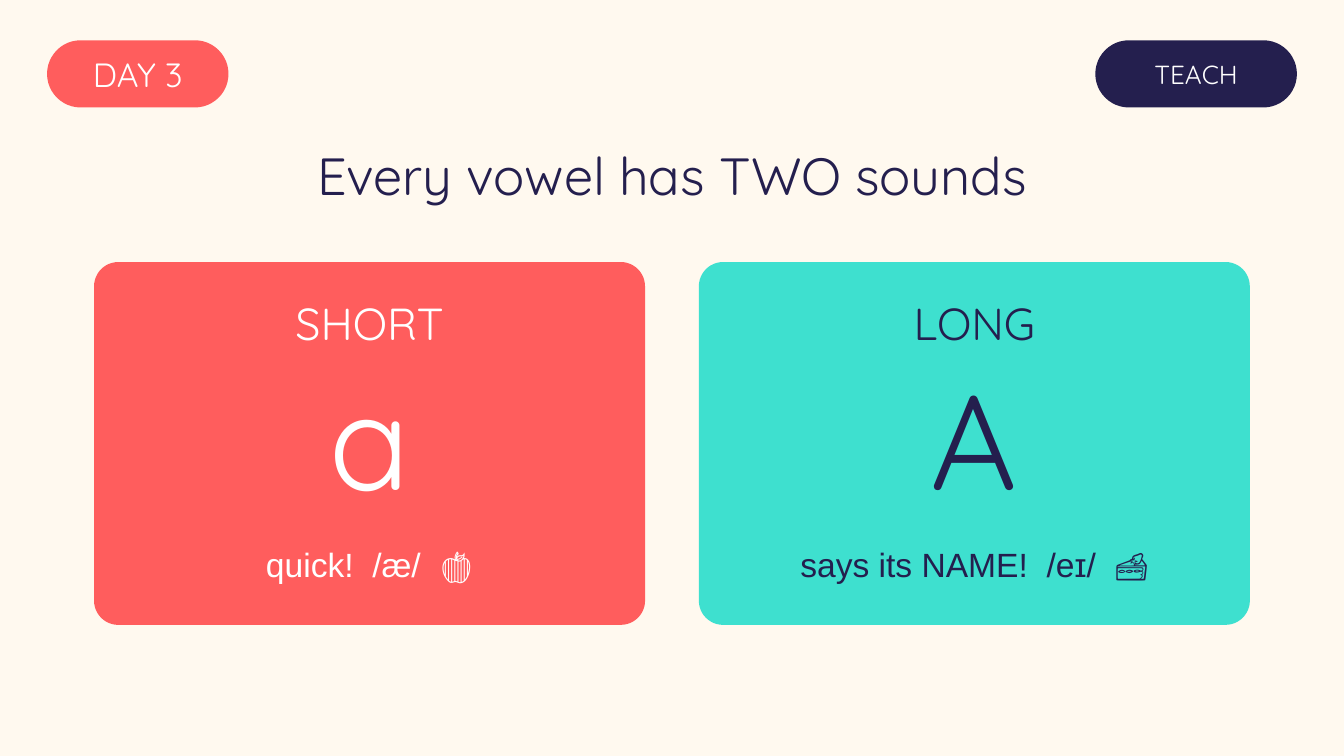
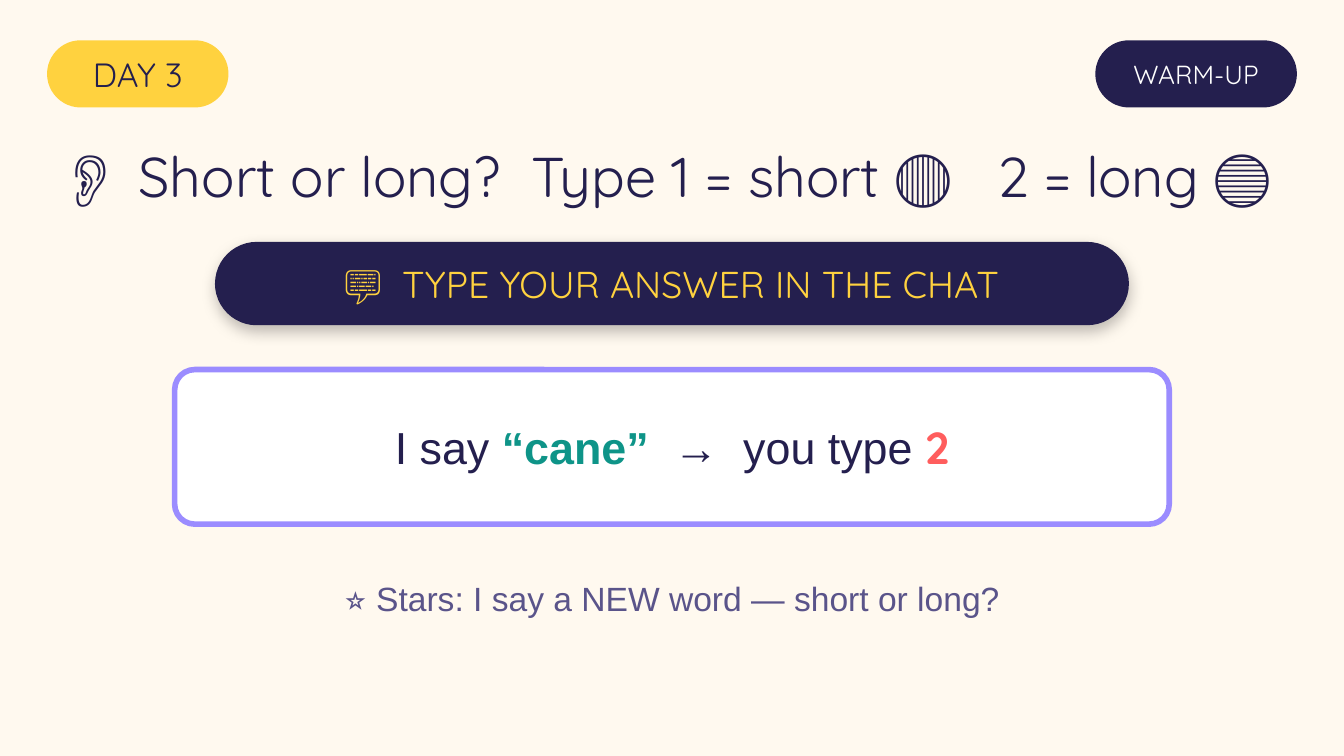
"""Build two phonics lesson slides: a vowel comparison and a chat warm-up."""
from dataclasses import dataclass
from typing import Optional

from lxml.etree import SubElement
from pptx import Presentation
from pptx.dml.color import RGBColor
from pptx.enum.shapes import MSO_SHAPE
from pptx.enum.text import MSO_ANCHOR, MSO_AUTO_SIZE, PP_ALIGN
from pptx.oxml.ns import qn
from pptx.shapes.autoshape import Shape
from pptx.slide import Slide
from pptx.text.text import TextFrame
from pptx.util import Emu, Inches, Pt

CREAM, WHITE, NAVY, MUTED = "FFF9EF", "FFFFFF", "241F4E", "5A548A"
CORAL, AQUA, YELLOW, LILAC, TEAL = "FF5D5D", "3EE0CF", "FFD23F", "9B8CFF", "0E9488"
HEADING, BODY = "Quicksand", "Arial"
COLUMNS = 100
CELL = Inches(10) // COLUMNS
TITLE_ONLY = 5


@dataclass(frozen=True)
class Area:
    """A rectangle in grid columns and rows."""
    column: float
    row: float
    columns: float
    rows: float

    def lengths(self) -> list[Emu]:
        """Return left, top, width and height."""
        return [Emu(round(n * CELL)) for n in (self.column, self.row, self.columns, self.rows)]


@dataclass(frozen=True)
class Style:
    """Size, colour and typeface of a paragraph."""
    size: float
    color: str
    family: str = HEADING


@dataclass(frozen=True)
class Part:
    """A stretch of a sentence, with its emphasis if any."""
    words: str
    color: Optional[str] = None
    family: Optional[str] = None


@dataclass(frozen=True)
class VowelCard:
    """One vowel sound with its colours."""
    kind: str
    letter: str
    hint: str
    fill: str
    ink: str


DAY_AREA = Area(3.5, 3, 13.5, 5)
STAGE_AREA = Area(81.5, 3, 15, 5)
TITLE_AREA = Area(0, 9.5, COLUMNS, 7)
CHAT_AREA = Area(16, 18, 68, 6.2)
EXAMPLE_AREA = Area(13, 27.5, 74, 11.5)
STARS_AREA = Area(0, 42, COLUMNS, 5)

CARD_MARGIN, CARD_GAP, CARD_TOP, CARD_ROWS = 7, 4, 19.5, 27
CARDS = [
    VowelCard("SHORT", "a", "quick!  /æ/  🍎", CORAL, WHITE),
    VowelCard("LONG", "A", "says its NAME!  /eɪ/  🍰", AQUA, NAVY),
]
EXAMPLE = [
    Part("I say "),
    Part("“cane”", TEAL),
    Part("  →  you type "),
    Part("2", CORAL, HEADING),
]


def rgb(color: str) -> RGBColor:
    """Turn a hex string into a colour."""
    return RGBColor.from_string(color)


def write(frame: TextFrame, parts: list[Part], style: Style, inset: Optional[float] = None) -> None:
    """Write one centred paragraph into a frame."""
    frame.word_wrap = True
    frame.auto_size = MSO_AUTO_SIZE.NONE
    frame.vertical_anchor = MSO_ANCHOR.MIDDLE
    if inset is not None:
        frame.margin_left = frame.margin_right = Inches(inset)
        frame.margin_top = frame.margin_bottom = Inches(inset)
    paragraph = frame.paragraphs[0]
    paragraph.alignment = PP_ALIGN.CENTER
    paragraph.font.size = Pt(style.size)
    paragraph.font.name = style.family
    paragraph.font.color.rgb = rgb(style.color)
    for part in parts:
        run = paragraph.add_run()
        run.text = part.words
        if part.color:
            run.font.bold = True
            run.font.color.rgb = rgb(part.color)
        if part.family:
            run.font.name = part.family


def add_label(slide: Slide, area: Area, words: str, style: Style) -> None:
    """Add a line of free text."""
    write(slide.shapes.add_textbox(*area.lengths()).text_frame, [Part(words)], style)


def add_panel(slide: Slide, area: Area, fill: str, rounding: float,
              outline: Optional[str] = None) -> Shape:
    """Add a rounded panel without shadow."""
    panel = slide.shapes.add_shape(MSO_SHAPE.ROUNDED_RECTANGLE, *area.lengths())
    panel.adjustments[0] = rounding
    panel.shadow.inherit = False
    panel.fill.solid()
    panel.fill.fore_color.rgb = rgb(fill)
    if outline:
        panel.line.color.rgb = rgb(outline)
        panel.line.width = Pt(3)
    else:
        panel.line.fill.background()
    return panel


def add_pill(slide: Slide, area: Area, words: str, fill: str, style: Style) -> Shape:
    """Add a fully rounded panel with a caption."""
    pill = add_panel(slide, area, fill, 0.5)
    write(pill.text_frame, [Part(words)], style, inset=0)
    return pill


def add_soft_shadow(panel: Shape) -> None:
    """Cast a faint shadow straight down."""
    effects = panel._element.spPr.find(qn("a:effectLst"))
    shadow = SubElement(effects, qn("a:outerShdw"), blurRad=str(Pt(8)), dist=str(Pt(3)),
                        dir="5400000", algn="ctr", rotWithShape="0")
    black = SubElement(shadow, qn("a:srgbClr"), val="000000")
    SubElement(black, qn("a:alpha"), val="25000")


def add_lesson_slide(deck: Presentation, title: str, title_size: float, stage: str,
                     day_fill: str, day_ink: str) -> Slide:
    """Add a slide with day pill, stage pill and title."""
    slide = deck.slides.add_slide(deck.slide_layouts[TITLE_ONLY])
    heading = slide.shapes.title
    heading.left, heading.top, heading.width, heading.height = TITLE_AREA.lengths()
    write(heading.text_frame, [Part(title)], Style(title_size, NAVY))
    add_pill(slide, DAY_AREA, "DAY 3", day_fill, Style(18, day_ink))
    add_pill(slide, STAGE_AREA, stage, NAVY, Style(14, WHITE))
    return slide


def add_vowel_card(slide: Slide, index: int, card: VowelCard) -> None:
    """Add a card at its place in the row."""
    columns = (COLUMNS - 2 * CARD_MARGIN - CARD_GAP * (len(CARDS) - 1)) / len(CARDS)
    left = CARD_MARGIN + index * (columns + CARD_GAP)
    add_panel(slide, Area(left, CARD_TOP, columns, CARD_ROWS), card.fill, 0.067)
    for offset, rows, words, style in (
        (2, 5, card.kind, Style(24, card.ink)),
        (7.5, 11, card.letter, Style(72, card.ink)),
        (20, 5, card.hint, Style(18, card.ink, BODY)),
    ):
        add_label(slide, Area(left, CARD_TOP + offset, columns, rows), words, style)


def build_teach(deck: Presentation) -> None:
    """Build the slide comparing the two vowel sounds."""
    slide = add_lesson_slide(deck, "Every vowel has TWO sounds", 28, "TEACH", CORAL, WHITE)
    for index, card in enumerate(CARDS):
        add_vowel_card(slide, index, card)


def build_warm_up(deck: Presentation) -> None:
    """Build the slide with the listening task."""
    question = "👂  Short or long?  Type 1 = short 🔴   2 = long 🔵"
    slide = add_lesson_slide(deck, question, 30, "WARM-UP", YELLOW, NAVY)
    chat = add_pill(slide, CHAT_AREA, "💬  TYPE YOUR ANSWER IN THE CHAT", NAVY, Style(20, YELLOW))
    add_soft_shadow(chat)
    example = add_panel(slide, EXAMPLE_AREA, WHITE, 0.13, LILAC)
    write(example.text_frame, EXAMPLE, Style(24, NAVY, BODY))
    add_label(slide, STARS_AREA, "⭐ Stars: I say a NEW word — short or long?",
              Style(18, MUTED, BODY))


def main() -> None:
    """Build and save the deck."""
    deck = Presentation()
    deck.slide_width, deck.slide_height = Inches(10), Inches(5.625)
    backdrop = deck.slide_master.background.fill
    backdrop.solid()
    backdrop.fore_color.rgb = rgb(CREAM)
    build_teach(deck)
    build_warm_up(deck)
    deck.save("out.pptx")


if __name__ == "__main__":
    main()
